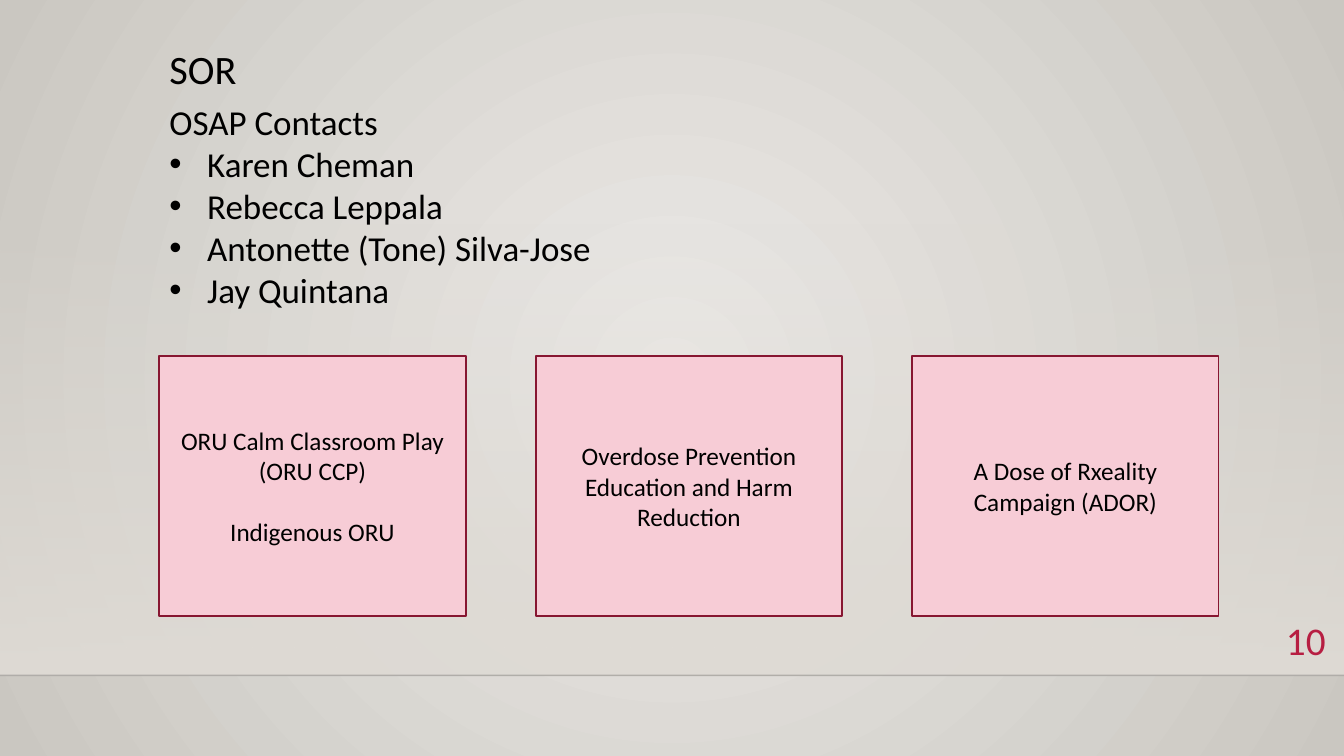
from lxml import etree
from pptx import Presentation
from pptx.dml.color import RGBColor
from pptx.enum import shapes, text
from pptx.oxml import ns
from pptx.util import Pt

PAGE_WIDTH, PAGE_HEIGHT = 960, 540
LEFT, WIDTH = 113.8, 756.7
FLOOR = 482.4
FONT = "Calibri"

BLACK = RGBColor(0x00, 0x00, 0x00)
PINK = RGBColor(0xF7, 0xCC, 0xD6)
MAROON = RGBColor(0x87, 0x16, 0x31)
CRIMSON = RGBColor(0xB7, 0x1E, 0x42)
STONE_LIGHT = RGBColor(0xEC, 0xEA, 0xE7)
STONE_DARK = RGBColor(0xCA, 0xC7, 0xC1)
SAND = RGBColor(0xDF, 0xDB, 0xD5)
RULE = RGBColor(0x00, 0x00, 0x01)

CONTACTS = ["Karen Cheman", "Rebecca Leppala",
            "Antonette (Tone) Silva-Jose", "Jay Quintana"]
PROGRAMS = [
    ["ORU Calm Classroom Play (ORU CCP)", "Indigenous ORU"],
    ["Overdose Prevention Education and Harm Reduction"],
    ["A Dose of Rxeality Campaign (ADOR)"],
]


def add_xml(parent, tag, **attributes):
    return etree.SubElement(parent, ns.qn(tag), attributes)


def swap_in_gradient(holder, stops):
    """Replace the solid fill in holder by a gradient of (colour, opacity) stops."""
    solid = holder.find(ns.qn("a:solidFill"))
    gradient = etree.Element(ns.qn("a:gradFill"), rotWithShape="1")
    stop_list = add_xml(gradient, "a:gsLst")
    for index, (color, opacity) in enumerate(stops):
        stop = add_xml(stop_list, "a:gs", pos=str(index * 100000))
        tint = add_xml(stop, "a:srgbClr", val=str(color))
        add_xml(tint, "a:alpha", val=str(opacity * 1000))
    holder.replace(solid, gradient)
    return gradient


def place(shape, left, top, width, height):
    shape.left, shape.top = Pt(left), Pt(top)
    shape.width, shape.height = Pt(width), Pt(height)


def style(para, size, align, color=BLACK):
    para.alignment = align
    para.space_before = para.space_after = Pt(0)
    for span in para.runs:
        span.font.name = FONT
        span.font.size = Pt(size)
        span.font.color.rgb = color


def draw_backdrop(page, top, floor):
    page.background.fill.solid()
    backdrop = page.element.find(".//" + ns.qn("p:bgPr"))
    gradient = swap_in_gradient(backdrop, [(STONE_LIGHT, 100), (STONE_DARK, 100)])
    circle = add_xml(gradient, "a:path", path="circle")
    add_xml(circle, "a:fillToRect", l="50000", t="50000", r="50000", b="50000")

    band = page.shapes.add_shape(shapes.MSO_SHAPE.RECTANGLE, 0, Pt(top),
                                 Pt(PAGE_WIDTH), Pt(floor - top))
    band.shadow.inherit = False
    band.line.fill.background()
    band.fill.solid()
    gradient = swap_in_gradient(band.element.spPr, [(SAND, 0), (SAND, 100)])
    add_xml(gradient, "a:lin", ang="5400000", scaled="0")

    edge = page.shapes.add_connector(shapes.MSO_CONNECTOR.STRAIGHT, 0, Pt(floor),
                                     Pt(PAGE_WIDTH), Pt(floor))
    edge.line.color.rgb = RULE
    edge.line.width = Pt(1)
    add_xml(edge.element.find(".//" + ns.qn("a:srgbClr")), "a:alpha", val="20000")
    add_xml(edge.element.spPr, "a:effectLst")

    # The backdrop goes behind the placeholders
    for depth, part in enumerate([band, edge], start=2):
        page.shapes.element.insert(depth, part.element)


def write_title(title, left, top, width, height):
    place(title, left, top, width, height)
    title.text_frame.text = "SOR"
    title.text_frame.auto_size = text.MSO_AUTO_SIZE.NONE
    title.text_frame.vertical_anchor = text.MSO_ANCHOR.MIDDLE
    para = title.text_frame.paragraphs[0]
    style(para, 28.8, text.PP_ALIGN.LEFT)
    para.line_spacing = 0.9


def write_contacts(body, left, top, width, height):
    place(body, left, top, width, height)
    frame = body.text_frame
    frame.text = "\n".join(["OSAP Contacts"] + CONTACTS)
    frame.auto_size = text.MSO_AUTO_SIZE.NONE
    frame.vertical_anchor = text.MSO_ANCHOR.TOP
    for index, para in enumerate(frame.paragraphs):
        indent = Pt(27) if index else 0
        properties = para._p.get_or_add_pPr()
        properties.set("marL", str(indent))
        properties.set("indent", str(-indent))
        if index:
            add_xml(properties, "a:buFont", typeface="Arial")
            add_xml(properties, "a:buChar", char="•")
        else:
            add_xml(properties, "a:buNone")
        style(para, 25, text.PP_ALIGN.LEFT)


def draw_programs(page, left, top, width, height, gap=50):
    card_width = (width - gap * (len(PROGRAMS) - 1)) / len(PROGRAMS)
    for column, lines in enumerate(PROGRAMS):
        card = page.shapes.add_shape(
            shapes.MSO_SHAPE.RECTANGLE, Pt(left + column * (card_width + gap)),
            Pt(top), Pt(card_width), Pt(height))
        card.shadow.inherit = False
        card.fill.solid()
        card.fill.fore_color.rgb = PINK
        card.line.color.rgb = MAROON
        card.line.width = Pt(1.25)
        card.text_frame.word_wrap = True
        card.text_frame.vertical_anchor = text.MSO_ANCHOR.MIDDLE
        card.text_frame.text = "\n".join(lines)
        for index, para in enumerate(card.text_frame.paragraphs):
            style(para, 18, text.PP_ALIGN.CENTER)
            if index:
                para.space_before = Pt(22)


def write_page_number(page, left, top, width, height):
    box = page.shapes.add_textbox(Pt(left), Pt(top), Pt(width), Pt(height))
    box.text_frame.word_wrap = True
    box.text_frame.text = "10"
    style(box.text_frame.paragraphs[0], 28, text.PP_ALIGN.RIGHT, CRIMSON)


def main():
    deck = Presentation()
    deck.slide_width, deck.slide_height = Pt(PAGE_WIDTH), Pt(PAGE_HEIGHT)
    page = deck.slides.add_slide(deck.slide_layouts[1])
    draw_backdrop(page, 159, FLOOR)
    write_title(page.shapes.title, LEFT, 31, WIDTH, 39.6)
    write_contacts(page.placeholders[1], LEFT, 68.4, WIDTH, 158.4)
    draw_programs(page, LEFT, 254.2, WIDTH, 185.8)
    write_page_number(page, 890, 436.3, 64, 39.6)
    deck.save("out.pptx")


if __name__ == "__main__":
    main()
